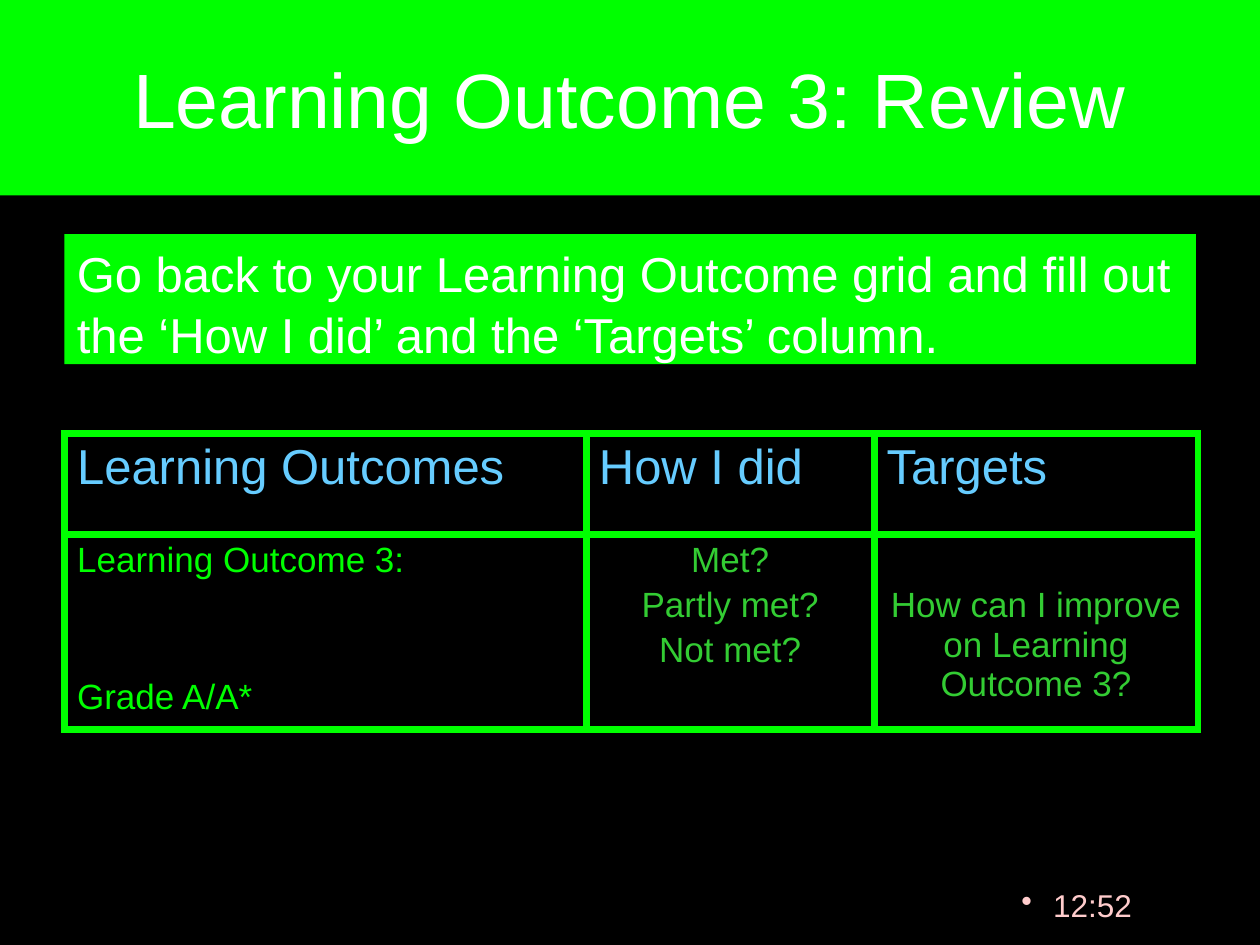
from lxml.etree import SubElement
from pptx import Presentation
from pptx.dml.color import RGBColor
from pptx.enum.shapes import MSO_SHAPE as Shape
from pptx.enum.text import MSO_ANCHOR as Anchor, PP_ALIGN as Align
from pptx.oxml import parse_xml
from pptx.oxml.ns import nsdecls, qn
from pptx.util import Cm, Pt

BLACK = RGBColor(0x00, 0x00, 0x00)
WHITE = RGBColor(0xFF, 0xFF, 0xFF)
LIME = RGBColor(0x00, 0xFF, 0x00)
GREEN = RGBColor(0x33, 0xCC, 0x33)
SKY = RGBColor(0x66, 0xCC, 0xFF)
PINK = RGBColor(0xFF, 0xCC, 0xCC)

TITLE = "Learning Outcome 3: Review"
TASK = ("Go back to your Learning Outcome grid and fill out "
        "the ‘How I did’ and the ‘Targets’ column.")
TIME = "12:52"

HEADERS = ["Learning Outcomes", "How I did", "Targets"]
# One entry per column: lines, format, top margin in cm
REVIEW = [
    (["Learning Outcome 3:", "Grade A/A*"], dict(color=LIME, before=56), 0.13),
    (["Met?", "Partly met?", "Not met?"],
     dict(color=GREEN, align=Align.CENTER, before=3.5), 0.13),
    (["How can I improve on Learning Outcome 3?"],
     dict(color=GREEN, align=Align.CENTER), 1.05),
]
COL_WIDTHS = [10.52, 5.8, 6.53]
ROW_HEIGHTS = [2.03, 3.81]
LEFT = Cm(1.3)


def write(tf, *lines, size, color, align=Align.LEFT, before=0, spacing=None):
    tf.word_wrap = True
    for i, line in enumerate(lines):
        p = tf.paragraphs[0] if i == 0 else tf.add_paragraph()
        p.alignment = align
        p.space_before = Pt(before if i else 0)
        p.line_spacing = spacing
        r = p.add_run()
        r.text = line
        r.font.name = "Arial"
        r.font.size = Pt(size)
        r.font.color.rgb = color


def fill(obj, color):
    obj.fill.solid()
    obj.fill.fore_color.rgb = color


def add_borders(cell, color, width):
    tc_pr = cell._tc.get_or_add_tcPr()
    for i, side in enumerate("LRTB"):
        tc_pr.insert(i, parse_xml(
            f'<a:ln{side} {nsdecls("a")} w="{Pt(width)}"><a:solidFill>'
            f'<a:srgbClr val="{color}"/></a:solidFill></a:ln{side}>'))


def add_bullet(p, indent):
    p_pr = p._p.get_or_add_pPr()
    p_pr.set("marL", str(indent))
    p_pr.set("indent", str(-indent))
    SubElement(p_pr, qn("a:buChar")).set("char", "•")


def add_title(s):
    sp = s.shapes.title
    sp.left, sp.top, sp.width, sp.height = 0, 0, Cm(25.4), Cm(3.94)
    fill(sp, LIME)
    sp.text_frame.vertical_anchor = Anchor.MIDDLE
    write(sp.text_frame, TITLE, size=44, color=WHITE, align=Align.CENTER)


def add_time(s):
    tf = s.shapes.add_textbox(Cm(19.91), Cm(17.73), Cm(3.99), Cm(1.32)).text_frame
    tf.margin_left, tf.margin_right = 0, Cm(0.4)
    write(tf, TIME, size=18, color=PINK, align=Align.CENTER)
    add_bullet(tf.paragraphs[0], Cm(0.64))


def add_review_table(s):
    table = s.shapes.add_table(2, 3, LEFT, Cm(8.74), Cm(sum(COL_WIDTHS)),
                               Cm(sum(ROW_HEIGHTS))).table
    for col, width in zip(table.columns, COL_WIDTHS):
        col.width = Cm(width)
    for row, height in zip(table.rows, ROW_HEIGHTS):
        row.height = Cm(height)
    for c, (header, (lines, style, top)) in enumerate(zip(HEADERS, REVIEW)):
        write(table.cell(0, c).text_frame, header, size=28, color=SKY)
        body = table.cell(1, c)
        body.margin_top = Cm(top)
        write(body.text_frame, *lines, size=20, **style)
    for cell in table.iter_cells():
        fill(cell, BLACK)
        add_borders(cell, LIME, 4.5)


def add_task(s):
    sp = s.shapes.add_shape(Shape.RECTANGLE, LEFT, Cm(4.72), Cm(22.81), Cm(2.62))
    sp.shadow.inherit = False
    fill(sp, LIME)
    sp.line.fill.background()
    sp.text_frame.vertical_anchor = Anchor.TOP
    write(sp.text_frame, TASK, size=28, color=WHITE, spacing=1.05)


def main():
    prs = Presentation()
    prs.slide_width, prs.slide_height = Cm(25.4), Cm(19.05)
    s = prs.slides.add_slide(prs.slide_layouts[5])
    fill(s.background, BLACK)
    add_title(s)
    add_time(s)
    add_review_table(s)
    add_task(s)
    prs.save("out.pptx")


if __name__ == "__main__":
    main()
